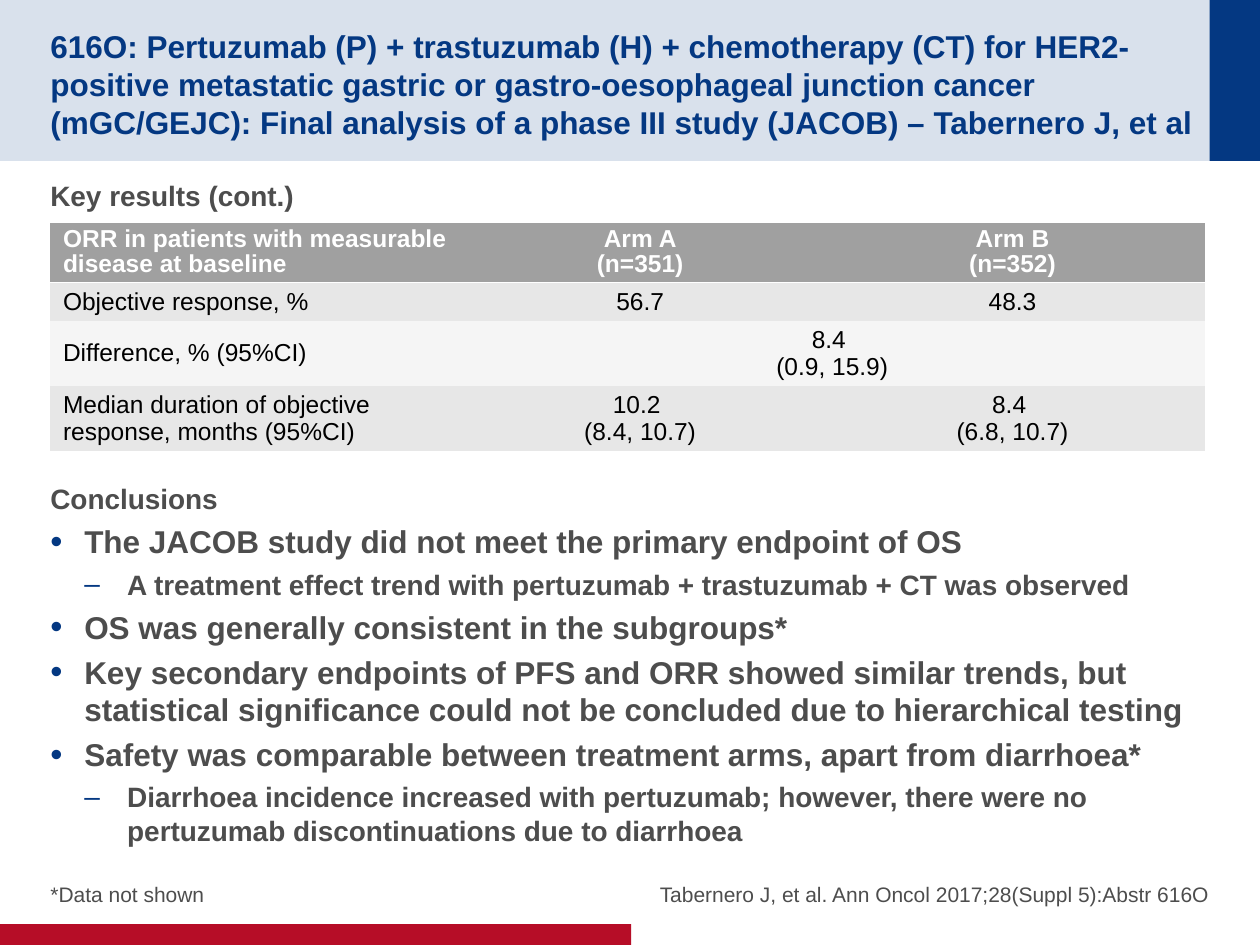
from dataclasses import dataclass

from pptx import Presentation
from pptx.dml.color import RGBColor
from pptx.enum import shapes, text
from pptx.oxml import parse_xml
from pptx.oxml import ns
from pptx.util import Pt


@dataclass(frozen=True)
class Theme:
    font: str = "Arial"
    navy: str = "043882"
    pale: str = "D9E1EC"
    red: str = "B60D27"
    ink: str = "4D4D4D"
    black: str = "000000"
    white: str = "FFFFFF"
    head: str = "A0A0A0"
    dark: str = "E7E7E7"
    light: str = "F5F5F5"
    big: int = 18
    mid: int = 16
    cell: int = 14
    note: int = 12


T = Theme()
LEFT, RIGHT, CENTER = text.PP_ALIGN.LEFT, text.PP_ALIGN.RIGHT, text.PP_ALIGN.CENTER
TOP, MIDDLE, BOTTOM = (text.MSO_ANCHOR.TOP, text.MSO_ANCHOR.MIDDLE,
                       text.MSO_ANCHOR.BOTTOM)

TITLE = ("616O: Pertuzumab (P) + trastuzumab (H) + chemotherapy (CT) for "
         "HER2-positive metastatic gastric or gastro-oesophageal junction cancer "
         "(mGC/GEJC): Final analysis of a phase III study (JACOB) – Tabernero J, et al")
POINTS = [
    (0, "The JACOB study did not meet the primary endpoint of OS"),
    (1, "A treatment effect trend with pertuzumab + trastuzumab + CT was observed"),
    (0, "OS was generally consistent in the subgroups*"),
    (0, "Key secondary endpoints of PFS and ORR showed similar trends, but "
        "statistical significance could not be concluded due to hierarchical testing"),
    (0, "Safety was comparable between treatment arms, apart from diarrhoea*"),
    (1, "Diarrhoea incidence increased with pertuzumab; however, there were no "
        "pertuzumab discontinuations due to diarrhoea"),
]
ROWS = [
    ("ORR in patients with measurable disease at baseline",
     "Arm A\n(n=351)", "Arm B\n(n=352)"),
    ("Objective response, %", "56.7", "48.3"),
    ("Difference, % (95%CI)", "8.4 \n(0.9, 15.9)", None),
    ("Median duration of objective response, months (95%CI)",
     "10.2 \n(8.4, 10.7)", "8.4 \n(6.8, 10.7)"),
]
COLS = (234, 206, 219.6)
HIGHS = (33.8, 21.7, 37.1, 37.1)
FILLS = (T.head, T.dark, T.light, T.dark)
BULLETS = (("•", 19.4, -19.4, 110, T.big), ("–", 43.9, -24.5, 100, T.mid))


def rgb(code):
    return RGBColor.from_string(code)


def write(frame, words, size=T.mid, color=T.ink, bold=False, align=LEFT,
          before=0, after=0, line=1.0, more=False):
    for i, part in enumerate(words.split("\n")):
        para = frame.add_paragraph() if more or i else frame.paragraphs[0]
        para.alignment = align
        para.space_before, para.space_after = Pt(before), Pt(after)
        para.line_spacing = line
        run = para.add_run()
        run.text = part
        font = run.font
        font.name, font.size, font.bold = T.font, Pt(size), bold
        font.color.rgb = rgb(color)
    return para


def mark(para, level):
    sign, left, hang, size, _ = BULLETS[level]
    para.level = level
    props = para._p.get_or_add_pPr()
    props.set("marL", str(Pt(left)))
    props.set("indent", str(Pt(hang)))
    names = ns.nsdecls("a")
    for xml in (f'<a:buClr {names}><a:srgbClr val="{T.navy}"/></a:buClr>',
                f'<a:buSzPct {names} val="{size * 1000}"/>',
                f'<a:buFont {names} typeface="{T.font}"/>',
                f'<a:buChar {names} char="{sign}"/>'):
        props.append(parse_xml(xml))


def setup(frame, anchor=TOP, top=0, bottom=0):
    frame.word_wrap = True
    frame.auto_size = text.MSO_AUTO_SIZE.NONE
    frame.vertical_anchor = anchor
    frame.margin_left = frame.margin_right = 0
    frame.margin_top, frame.margin_bottom = Pt(top), Pt(bottom)
    return frame


def block(slide, box, color):
    shape = slide.shapes.add_shape(shapes.MSO_SHAPE.RECTANGLE, *map(Pt, box))
    shape.shadow.inherit = False
    shape.fill.solid()
    shape.fill.fore_color.rgb = rgb(color)
    shape.line.fill.background()


def banner(slide, box):
    x, y, w, h = box
    edge = 28.8
    block(slide, box, T.pale)
    block(slide, (x + w - edge, y, edge, h), T.navy)
    title = slide.shapes.title
    title.left, title.top = Pt(x + edge), Pt(y + 14.4)
    title.width, title.height = Pt(w - 2 * edge - 7.2), Pt(h - 28.8)
    write(setup(title.text_frame, MIDDLE, 3.6), TITLE, size=T.big,
          color=T.navy, bold=True)
    tree = slide.shapes._spTree
    tree.remove(title._element)
    tree.append(title._element)


def body(slide, box):
    frame = setup(slide.shapes.add_textbox(*map(Pt, box)).text_frame, TOP, 3.6, 3.6)
    write(frame, "Key results (cont.)", bold=True, after=4)
    write(frame, "Conclusions", bold=True, before=150, after=4, more=True)
    for level, words in POINTS:
        para = write(frame, words, size=BULLETS[level][-1], bold=True,
                     after=4, more=True)
        mark(para, level)


def results(slide, box):
    shape = slide.shapes.add_table(len(ROWS), len(COLS), *map(Pt, box))
    table = shape.table
    table.horz_banding = False
    style = table._tbl.tblPr.find(ns.qn("a:tableStyleId"))
    style.text = "{2D5ABB26-0587-4C30-8999-92F81FD0307C}"
    for col, wide in zip(table.columns, COLS):
        col.width = Pt(wide)
    for r, row in enumerate(ROWS):
        table.rows[r].height = Pt(HIGHS[r])
        top = r == 0
        for c, words in enumerate(row):
            cell = table.cell(r, c)
            cell.fill.solid()
            cell.fill.fore_color.rgb = rgb(FILLS[r])
            cell.margin_left = cell.margin_right = Pt(7.2)
            cell.margin_top = cell.margin_bottom = Pt(2.9)
            cell.vertical_anchor = BOTTOM if top else MIDDLE
            if top:
                cell._tc.get_or_add_tcPr().insert(0, parse_xml(
                    f'<a:lnB {ns.nsdecls("a")} w="{Pt(1)}"><a:solidFill>'
                    f'<a:srgbClr val="{T.white}"/></a:solidFill></a:lnB>'))
            if words is None:
                table.cell(r, c - 1).merge(cell)
                continue
            write(cell.text_frame, words, size=T.cell, bold=top,
                  color=T.white if top else T.black,
                  align=CENTER if c else LEFT, line=0.9 if top else 1.0)


def footer(slide, box):
    x, y, w, h = box
    wide = 325.4
    notes = ((x, "*Data not shown", LEFT),
             (x + w - wide, "Tabernero J, et al. Ann Oncol 2017;28(Suppl 5):Abstr 616O",
              RIGHT))
    for left, words, align in notes:
        area = slide.shapes.add_textbox(Pt(left), Pt(y), Pt(wide), Pt(h))
        write(setup(area.text_frame, BOTTOM), words, size=T.note,
              align=align, after=4)


def main():
    deck = Presentation()
    deck.slide_width, deck.slide_height = Pt(720), Pt(540)
    slide = deck.slides.add_slide(deck.slide_layouts[5])
    banner(slide, (0, 0, 720, 92))
    block(slide, (0, 528, 360.7, 12), T.red)
    body(slide, (28.8, 98.6, 662.4, 373.7))
    footer(slide, (28.8, 480.2, 662.4, 38.2))
    results(slide, (28.8, 127.4, sum(COLS), sum(HIGHS)))
    deck.save("out.pptx")


if __name__ == "__main__":
    main()
